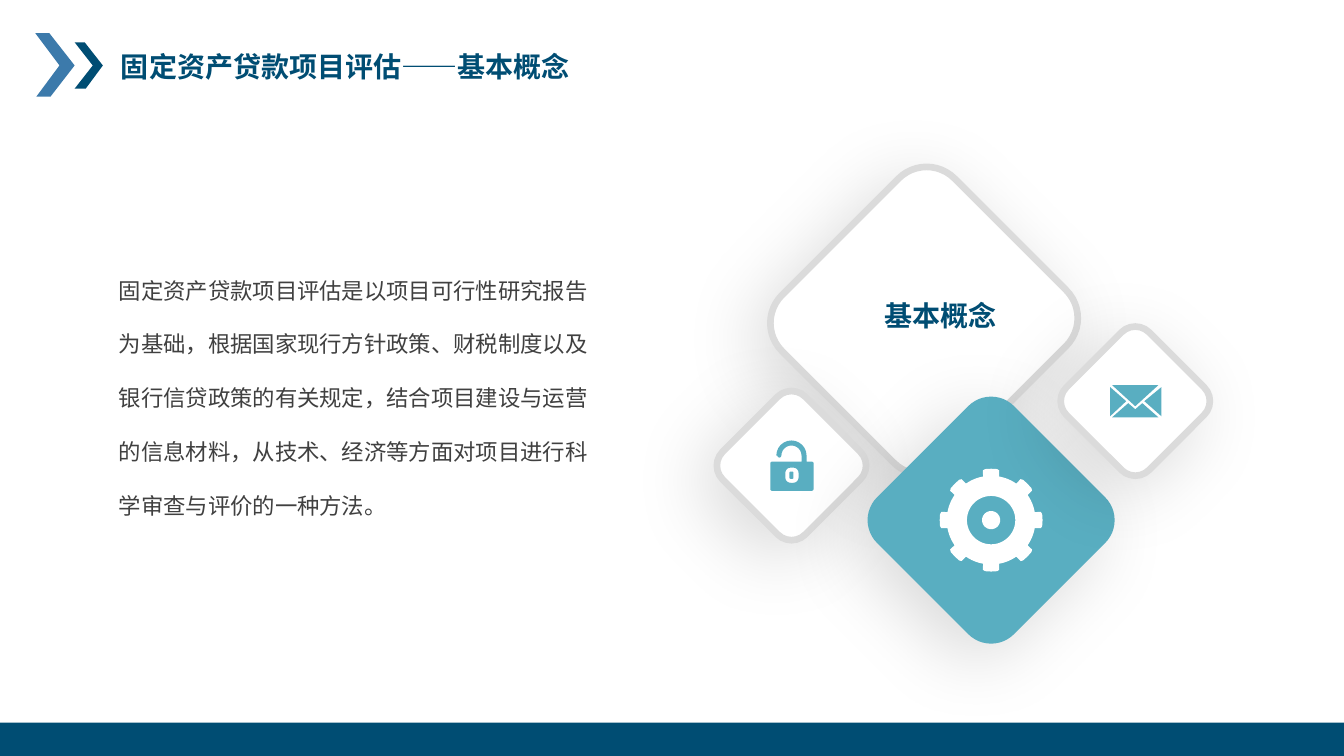
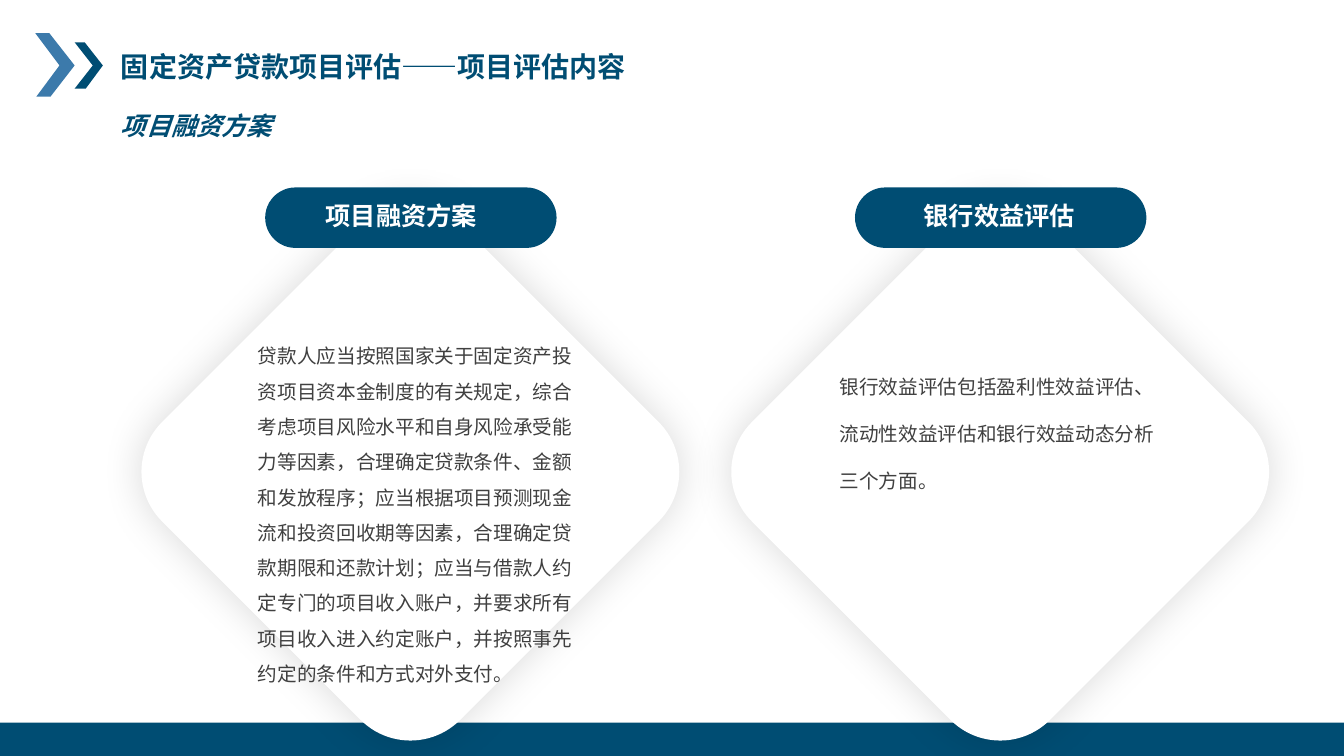
from math import cos, radians, sin

from lxml.etree import SubElement
from pptx import Presentation
from pptx.dml.color import RGBColor
from pptx.enum.shapes import MSO_SHAPE
from pptx.enum.text import MSO_ANCHOR, MSO_AUTO_SIZE, PP_ALIGN
from pptx.oxml.ns import qn
from pptx.util import Inches, Pt

COLORS = {
    "navy": "004D73",
    "blue": "3C7AAB",
    "teal": "59AEC1",
    "white": "FFFFFF",
    "ring": "DBDBDB",
    "text": "404040",
    "black": "000000",
}
FONT = "Noto Sans CJK SC"
WIDE, HIGH = 13.33, 7.5
LIFT = (55, 15, 135)
GLOW = (30, 0, 0)


def arc(x, y, r, start, end, steps=12):
    turns = [radians(start + (end - start) * i / steps) for i in range(steps + 1)]
    return [(x + r * cos(t), y - r * sin(t)) for t in turns]


def round_box(x, y, w, h, r):
    ends = [(x + w - r, y + r), (x + r, y + r), (x + r, y + h - r), (x + w - r, y + h - r)]
    return [p for i, (cx, cy) in enumerate(ends) for p in arc(cx, cy, r, 90 * i, 90 * i + 90, 6)]


class Deck:
    def __init__(self):
        self.prs = Presentation()
        self.prs.slide_width = Inches(WIDE)
        self.prs.slide_height = Inches(HIGH)
        self.slide = None

    def color(self, name):
        return RGBColor.from_string(COLORS[name])

    def paint(self, shape, fill, line=None):
        shape.shadow.inherit = False
        shape.fill.solid()
        shape.fill.fore_color.rgb = self.color(fill)
        if line:
            shape.line.color.rgb = self.color(line)
            shape.line.width = Pt(4.75)
        else:
            shape.line.fill.background()

    def shade(self, shape, blur, dist, angle):
        effects = shape._element.spPr.find(qn("a:effectLst"))
        outer = SubElement(
            effects, qn("a:outerShdw"), blurRad=str(Pt(blur)), dist=str(Pt(dist)),
            dir=str(angle * 60000), algn="ctr", rotWithShape="0")
        tint = SubElement(outer, qn("a:srgbClr"), val=COLORS["black"])
        SubElement(tint, qn("a:alpha"), val="15000")

    def box(self, kind, x, y, w, h, fill, line=None):
        shape = self.slide.shapes.add_shape(kind, Inches(x), Inches(y), Inches(w), Inches(h))
        self.paint(shape, fill, line)
        return shape

    def diamond(self, x, y, w, h, fill, shadow, line=None):
        shape = self.box(MSO_SHAPE.ROUNDED_RECTANGLE, x, y, w, h, fill, line)
        shape.rotation = 45
        self.shade(shape, *shadow)

    def outline(self, fill, *loops):
        loops = [[(Inches(x), Inches(y)) for x, y in loop] for loop in loops]
        pen = self.slide.shapes.build_freeform(*loops[0][0])
        for i, loop in enumerate(loops):
            if i:
                pen.move_to(*loop[0])
            pen.add_line_segments(loop[1:], close=True)
        self.paint(pen.convert_to_shape(), fill)

    def style(self, shape, text, size, color, bold=False, italic=False,
              align=PP_ALIGN.LEFT, space=1, wrap=True):
        frame = shape.text_frame
        frame.text = text
        frame.word_wrap = wrap
        frame.auto_size = MSO_AUTO_SIZE.NONE
        frame.vertical_anchor = MSO_ANCHOR.TOP
        line = frame.paragraphs[0]
        line.alignment = align
        line.line_spacing = space
        for run in line.runs:
            font = run.font
            font.name, font.size = FONT, Pt(size)
            font.bold, font.italic = bold, italic
            font.color.rgb = self.color(color)
            SubElement(run._r.get_or_add_rPr(), qn("a:ea"), typeface=FONT)

    def text(self, x, y, w, h, text, size, color, **looks):
        shape = self.slide.shapes.add_textbox(Inches(x), Inches(y), Inches(w), Inches(h))
        self.style(shape, text, size, color, **looks)

    def start(self, title):
        self.slide = self.prs.slides.add_slide(self.prs.slide_layouts[5])
        head = self.slide.shapes.title
        head.left, head.top = Inches(1.1), Inches(0.44)
        head.width, head.height = Inches(5.79), Inches(0.44)
        self.style(head, title, 20, "navy", bold=True)
        self.outline("blue", [(0.35, 0.33), (0.49, 0.33), (0.74, 0.65),
                              (0.5, 0.96), (0.36, 0.96), (0.59, 0.65)])
        self.outline("navy", [(0.74, 0.42), (0.84, 0.42), (1.02, 0.65),
                              (0.85, 0.88), (0.74, 0.88), (0.92, 0.65)])
        self.box(MSO_SHAPE.RECTANGLE, 0, 7.17, WIDE, 0.33, "navy")

    def lock(self):
        bow = [(8, 4.58), (7.95, 4.58)]
        bow += arc(7.85, 4.52, 0.1, 0, 180)
        bow += arc(7.73, 4.52, 0.02, 0, -180, 6)
        bow += arc(7.85, 4.52, 0.15, 180, 0)
        self.outline("teal", round_box(7.64, 4.58, 0.43, 0.29, 0.02), bow,
                     round_box(7.79, 4.64, 0.13, 0.15, 0.05),
                     round_box(7.83, 4.68, 0.04, 0.07, 0.01))

    def mail(self):
        self.outline(
            "teal",
            [(11.19, 4), (11.26, 4.06), (11.33, 4), (11.49, 4.14), (11.03, 4.14)],
            [(11.52, 3.84), (11.52, 4.13), (11.35, 3.98)],
            [(11.01, 3.84), (11.17, 3.98), (11.01, 4.13)],
            [(11.03, 3.82), (11.49, 3.82), (11.26, 4.03)])

    def gear(self, x, y):
        rim = []
        for turn in range(0, 360, 45):
            rim += arc(x, y, 0.5, turn - 9.3, turn - 9.3, 1)
            rim += arc(x, y, 0.51, turn - 6.7, turn + 6.7, 2)
            rim += arc(x, y, 0.5, turn + 9.3, turn + 9.3, 1)
            rim += arc(x, y, 0.44, turn + 10.5, turn + 34.5, 6)
        self.outline("white", rim, arc(x, y, 0.24, 0, 360, 48), arc(x, y, 0.09, 0, 360, 32))

    def card(self, x, label, label_x, body, place, space):
        self.diamond(x, 2.59, 4.18, 4.18, "white", GLOW)
        self.text(*place, body, 14, "text", space=space)
        pill = self.box(MSO_SHAPE.ROUNDED_RECTANGLE, x + 0.65, 1.86, 2.89, 0.6, "navy")
        pill.adjustments[0] = 0.5
        self.text(label_x, 1.94, 1.72, 0.4, label, 18, "white", bold=True,
                  align=PP_ALIGN.CENTER, wrap=False)


def concept(deck):
    deck.start("固定资产贷款项目评估——基本概念")
    deck.diamond(7.99, 1.97, 2.35, 2.42, "white", LIFT, "ring")
    deck.diamond(7.27, 4.04, 1.16, 1.16, "white", LIFT, "ring")
    deck.diamond(8.87, 4.2, 1.92, 1.92, "teal", LIFT)
    deck.diamond(10.68, 3.4, 1.16, 1.16, "white", LIFT, "ring")
    deck.lock()
    deck.mail()
    deck.gear(9.83, 5.16)
    deck.text(1.08, 2.43, 5.06, 2.71,
              "固定资产贷款项目评估是以项目可行性研究报告为基础，根据国家现行方针政策、"
              "财税制度以及银行信贷政策的有关规定，结合项目建设与运营的信息材料，从技术、"
              "经济等方面对项目进行科学审查与评价的一种方法。", 16, "text", space=2)
    deck.text(8.21, 2.91, 2.23, 0.44, "基本概念", 20, "navy", bold=True,
              align=PP_ALIGN.CENTER)


def content(deck):
    deck.start("固定资产贷款项目评估——项目评估内容")
    deck.text(1.1, 1.05, 1.72, 0.4, "项目融资方案", 18, "navy", bold=True,
              italic=True, wrap=False)
    deck.card(1.98, "项目融资方案", 3.12,
              "贷款人应当按照国家关于固定资产投资项目资本金制度的有关规定，综合考虑项目"
              "风险水平和自身风险承受能力等因素，合理确定贷款条件、金额和发放程序；应当"
              "根据项目预测现金流和投资回收期等因素，合理确定贷款期限和还款计划；应当与"
              "借款人约定专门的项目收入账户，并要求所有项目收入进入约定账户，并按照事先"
              "约定的条件和方式对外支付。", (2.46, 3.25, 3.44, 3.59), 1.5)
    deck.card(7.83, "银行效益评估", 9.05,
              "银行效益评估包括盈利性效益评估、流动性效益评估和银行效益动态分析三个方面。",
              (8.23, 3.44, 3.41, 1.44), 2)


def main():
    deck = Deck()
    concept(deck)
    content(deck)
    deck.prs.save("out.pptx")


if __name__ == "__main__":
    main()
